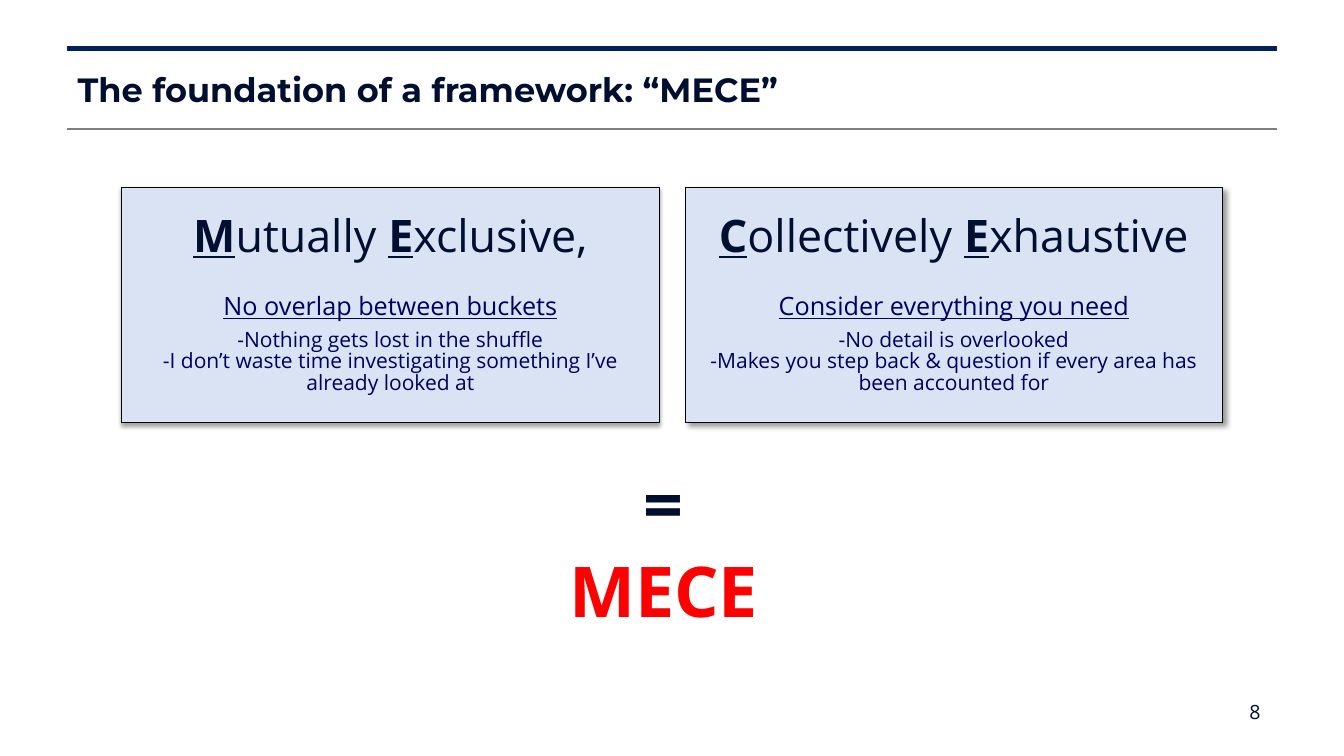
import pptx
import pptx.dml.color
import pptx.enum.shapes
import pptx.enum.text
import pptx.oxml
import pptx.oxml.ns
import pptx.util
from lxml import etree

Cm = pptx.util.Cm
Pt = pptx.util.Pt
RGB = pptx.dml.color.RGBColor
ALIGN = pptx.enum.text.PP_ALIGN
MIDDLE = pptx.enum.text.MSO_ANCHOR.MIDDLE

NAVY = RGB(0x00, 0x20, 0x60)
GREY = RGB(0x80, 0x80, 0x80)
INK = RGB(0x00, 0x0E, 0x2F)
BLUE = RGB(0x00, 0x00, 0x60)
PALE = RGB(0xDA, 0xE3, 0xF3)
BLACK = RGB(0x00, 0x00, 0x00)
RED = RGB(0xFF, 0x00, 0x00)
HEAD = "Montserrat"
BODY = "Open Sans"


def style(para, size, color, name=BODY, bold=None, align=ALIGN.CENTER):
    para.alignment = align
    font = para.font
    font.name = name
    font.size = Pt(size)
    font.bold = bold
    font.color.rgb = color


def add_rule(slide, left, top, width, color, weight):
    kind = pptx.enum.shapes.MSO_CONNECTOR.STRAIGHT
    rule = slide.shapes.add_connector(kind, Cm(left), Cm(top), Cm(left + width), Cm(top))
    rule.line.color.rgb = color
    rule.line.width = Pt(weight)
    etree.SubElement(rule._element.spPr, pptx.oxml.ns.qn("a:effectLst"))


def add_header(slide, left, top, width, height, text):
    add_rule(slide, left, top, width, NAVY, 3.5)
    add_rule(slide, left, top + height, width, GREY, 1.5)
    title = slide.shapes.title
    title.left, title.top = Cm(left), Cm(top)
    title.width, title.height = Cm(width), Cm(height)
    frame = title.text_frame
    frame.text = text
    frame.auto_size = pptx.enum.text.MSO_AUTO_SIZE.NONE
    frame.vertical_anchor = MIDDLE
    style(frame.paragraphs[0], 24, INK, HEAD, True, ALIGN.LEFT)


def add_shadow(shape, alpha, blur, dist, angle):
    shape.shadow.inherit = False
    effects = shape._element.spPr.find(pptx.oxml.ns.qn("a:effectLst"))
    effects.append(pptx.oxml.parse_xml(
        f'<a:outerShdw {pptx.oxml.ns.nsdecls("a")} blurRad="{Pt(blur)}" '
        f'dist="{Pt(dist)}" dir="{angle * 60000}" algn="tl" rotWithShape="0">'
        f'<a:srgbClr val="{BLACK}"><a:alpha val="{alpha * 1000}"/></a:srgbClr>'
        '</a:outerShdw>'))


def add_card(slide, left, top, width, height, words, lead, points, shadow):
    card = slide.shapes.add_shape(
        pptx.enum.shapes.MSO_SHAPE.RECTANGLE, Cm(left), Cm(top), Cm(width), Cm(height))
    card.fill.solid()
    card.fill.fore_color.rgb = PALE
    card.line.color.rgb = BLACK
    card.line.width = Pt(0.75)
    add_shadow(card, *shadow)
    frame = card.text_frame
    frame.word_wrap = True
    frame.vertical_anchor = MIDDLE

    para = frame.paragraphs[0]
    style(para, 32, INK)
    para.space_after = Pt(23.5)
    para.line_spacing = 0.87
    for word in words:
        first = para.add_run()
        first.text = word[0]
        first.font.bold = True
        first.font.underline = True
        para.add_run().text = word[1:]

    for index, text in enumerate([lead, *points]):
        para = frame.add_paragraph()
        para.text = text
        style(para, 15 if index else 18, BLUE)
        para.line_spacing = 0.87
        if index == 0:
            para.font.underline = True
            para.space_after = Pt(6)


def add_text(slide, left, top, width, height, lines, size, bold=None, indent=0):
    box = slide.shapes.add_textbox(Cm(left), Cm(top), Cm(width), Cm(height))
    frame = box.text_frame
    frame.word_wrap = True
    frame.vertical_anchor = MIDDLE
    for index, (text, color) in enumerate(lines):
        para = frame.add_paragraph() if index else frame.paragraphs[0]
        para.text = text
        style(para, size, color, bold=bold)
        if indent:
            para._p.get_or_add_pPr().set("marL", str(Cm(indent)))
        if index:
            para.space_before = Pt(2)


def add_cards(slide, left, top, width, height, gap):
    cards = [
        (["Mutually ", "Exclusive,"], "No overlap between buckets",
         ["-Nothing gets lost in the shuffle",
          "-I don’t waste time investigating something I’ve already looked at"],
         (35, 3.1, 1.8, 90)),
        (["Collectively ", "Exhaustive"], "Consider everything you need",
         ["-No detail is overlooked",
          "-Makes you step back & question if every area has been accounted for"],
         (40, 4, 3, 45)),
    ]
    span = (width - gap) / 2
    for index, card in enumerate(cards):
        add_card(slide, left + index * (span + gap), top, span, height, *card)


def main():
    deck = pptx.Presentation()
    deck.slide_width, deck.slide_height = Cm(33.87), Cm(19.05)
    slide = deck.slides.add_slide(deck.slide_layouts[5])
    add_header(slide, 1.7, 1.22, 30.48, 2.03, "The foundation of a framework: “MECE”")
    add_cards(slide, 3.07, 4.72, 27.74, 5.94, 0.66)
    add_text(slide, 3.07, 11.07, 26.85, 5.36, [("=", INK), ("MECE", RED)], 50, True, 0.46)
    add_text(slide, 30.43, 17.42, 2.39, 1.02, [("8", INK)], 14)
    deck.save("out.pptx")


if __name__ == "__main__":
    main()
